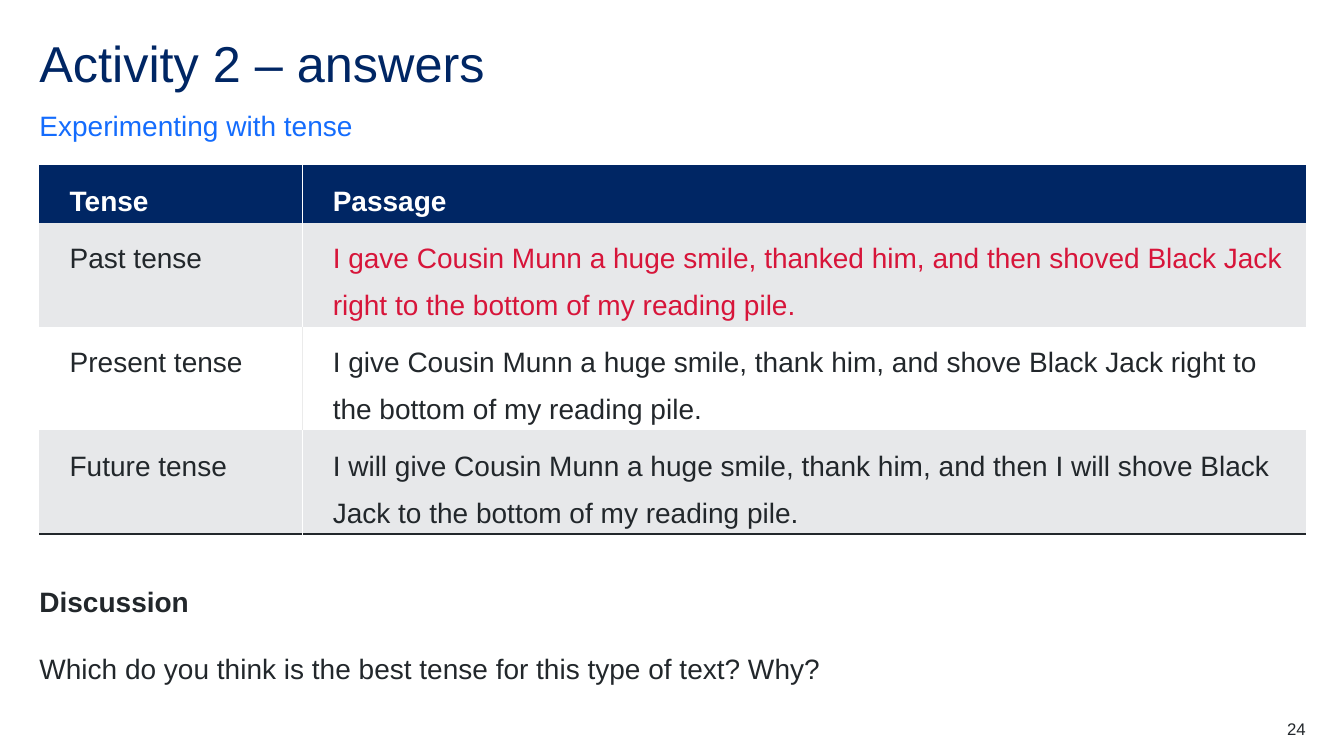
from lxml.etree import SubElement
from pptx import Presentation
from pptx.dml.color import RGBColor
from pptx.enum.text import MSO_ANCHOR, MSO_AUTO_SIZE, PP_ALIGN
from pptx.oxml.ns import qn
from pptx.util import Inches, Pt

NAVY = RGBColor(0x00, 0x26, 0x64)
BLUE = RGBColor(0x14, 0x6C, 0xFD)
RED = RGBColor(0xD7, 0x15, 0x3A)
INK = RGBColor(0x22, 0x27, 0x2B)
GREY = RGBColor(0xE7, 0xE8, 0xEA)
RULE = RGBColor(0xEB, 0xEB, 0xEB)
WHITE = RGBColor(0xFF, 0xFF, 0xFF)
PLAIN_TABLE = "{2D5ABB26-0587-4C30-8999-92F81FD0307C}"
LEFT = 2.93

PASSAGES = [
    ("Past tense", "I gave Cousin Munn a huge smile, thanked him, and then "
     "shoved Black Jack right to the bottom of my reading pile.", RED),
    ("Present tense", "I give Cousin Munn a huge smile, thank him, and shove "
     "Black Jack right to the bottom of my reading pile.", INK),
    ("Future tense", "I will give Cousin Munn a huge smile, thank him, and then "
     "I will shove Black Jack to the bottom of my reading pile.", INK),
]


class Deck:
    """Slide with one text style, placed by percentages of its width and height."""

    def __init__(self, font="Arial"):
        self.prs = Presentation()
        self.prs.slide_width, self.prs.slide_height = Inches(13.33), Inches(7.5)
        self.font = font
        self.s = self.prs.slides.add_slide(self.prs.slide_layouts[5])

    def x(self, share):
        return int(self.prs.slide_width * share / 100)

    def y(self, share):
        return int(self.prs.slide_height * share / 100)

    def add_run(self, p, text, color, size=20, bold=False, spacing=1.5, after=12,
                align=PP_ALIGN.LEFT):
        p.alignment, p.line_spacing, p.space_after = align, spacing, Pt(after)
        r = p.add_run()
        r.text = text
        r.font.name, r.font.size, r.font.bold = self.font, Pt(size), bold
        r.font.color.rgb = color

    def frame(self, sp, anchor):
        tf = sp.text_frame
        tf.margin_left = tf.margin_right = tf.margin_top = tf.margin_bottom = 0
        tf.word_wrap, tf.auto_size = True, MSO_AUTO_SIZE.NONE
        tf.vertical_anchor = anchor
        return tf

    def title(self, text, left, top, width, height):
        sp = self.s.shapes.title
        sp.left, sp.top = self.x(left), self.y(top)
        sp.width, sp.height = self.x(width), self.y(height)
        tf = self.frame(sp, MSO_ANCHOR.TOP)
        self.add_run(tf.paragraphs[0], text, NAVY, size=36, spacing=0.9, after=0)

    def text(self, lines, left, top, width, height, anchor=MSO_ANCHOR.TOP, **style):
        sp = self.s.shapes.add_textbox(self.x(left), self.y(top),
                                       self.x(width), self.y(height))
        tf = self.frame(sp, anchor)
        for i, (text, color, bold) in enumerate(lines):
            p = tf.add_paragraph() if i else tf.paragraphs[0]
            self.add_run(p, text, color, bold=bold, **style)

    def border(self, cell, side, color):
        ln = SubElement(cell._tc.get_or_add_tcPr(), qn("a:" + side), w=str(Pt(1)))
        fill = SubElement(ln, qn("a:solidFill"))
        SubElement(fill, qn("a:srgbClr"), val=str(color))

    def table(self, rows, left, top, widths, heights):
        sp = self.s.shapes.add_table(len(rows), len(widths), self.x(left), self.y(top),
                                     self.x(sum(widths)), self.y(sum(heights)))
        table = sp.table
        table._tbl.tblPr.find(qn("a:tableStyleId")).text = PLAIN_TABLE
        for column, width in zip(table.columns, widths):
            column.width = self.x(width)
        for i, (texts, colors, fill) in enumerate(rows):
            table.rows[i].height = self.y(heights[i])
            for j, (text, color) in enumerate(zip(texts, colors)):
                cell = table.cell(i, j)
                self.border(cell, "lnL" if j else "lnR",
                            RULE if fill == WHITE else WHITE)
                if i == len(rows) - 1:
                    self.border(cell, "lnB", INK)
                cell.fill.solid()
                cell.fill.fore_color.rgb = fill
                p = cell.text_frame.paragraphs[0]
                p._p.get_or_add_pPr().set("marL", str(Inches(0.2)))
                self.add_run(p, text, color, bold=i == 0)


def main():
    deck = Deck()
    deck.title("Activity 2 – answers", LEFT, 5.2, 82.67, 8)
    deck.text([("Experimenting with tense", BLUE, False)],
              LEFT, 14.27, 82.67, 4.53, anchor=MSO_ANCHOR.BOTTOM)
    rows = [(("Tense", "Passage"), (WHITE, WHITE), NAVY)]
    for i, (tense, passage, color) in enumerate(PASSAGES):
        rows.append(((tense, passage), (INK, color), WHITE if i % 2 else GREY))
    deck.table(rows, LEFT, 21.87, [19.58, 74.64], [7.6] + [13.7] * len(PASSAGES))
    deck.text([("Discussion", INK, True),
               ("Which do you think is the best tense for this type of text? Why?",
                INK, False)], LEFT, 75.07, 84.62, 15.47)
    deck.text([("24", INK, False)], 91.3, 95.07, 5.85, 2.67,
              size=12, spacing=1, after=0, align=PP_ALIGN.RIGHT)
    deck.prs.save("out.pptx")


if __name__ == "__main__":
    main()
